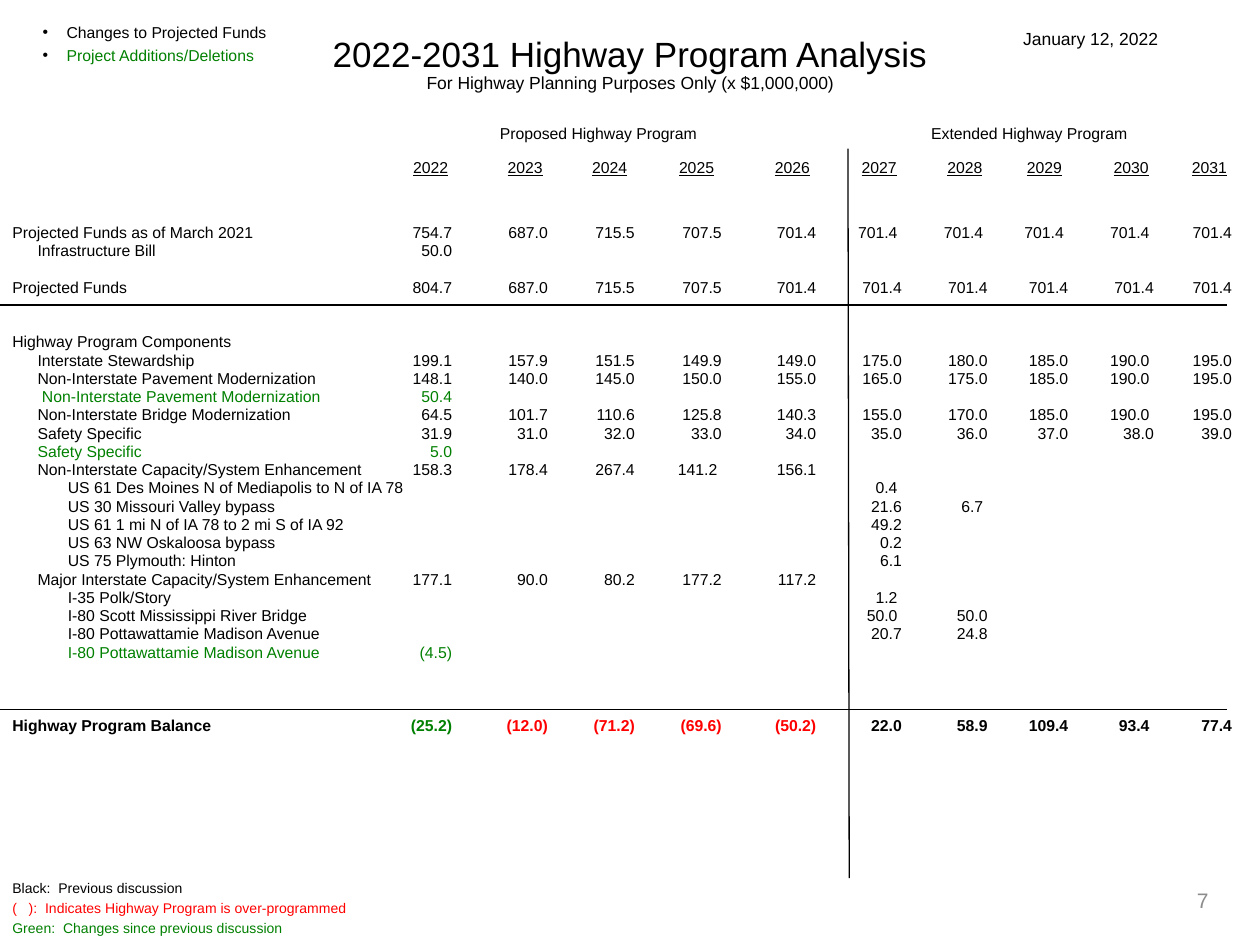
import pptx
import pptx.dml.color
import pptx.enum.shapes
import pptx.enum.text
import pptx.oxml
import pptx.oxml.ns
import pptx.util
import lxml.etree

Pt = pptx.util.Pt
qn = pptx.oxml.ns.qn
ALIGN = pptx.enum.text.PP_ALIGN
BLACK, GREEN, RED, GRAY = "000000", "008000", "FF0000", "8C8C8C"

deck = pptx.Presentation()
deck.slide_width = pptx.util.Inches(10)
deck.slide_height = pptx.util.Inches(7.5)
slide = deck.slides.add_slide(deck.slide_layouts[6])

# Grid: 100 columns by 100 rows
COL = deck.slide_width / 100
ROW = deck.slide_height / 100


def rgb(hex_string):
    return pptx.dml.color.RGBColor.from_string(hex_string)


def write(place, lines, size, top_inset=0.67, tabs=(), **frame_format):
    """Each line is (paragraph format, [(text, colour, font format), ...])."""
    left, top, width, height = place
    box = slide.shapes.add_textbox(round(left * COL), round(top * ROW),
                                   round(width * COL), round(height * ROW))
    frame = box.text_frame
    frame.word_wrap = True
    frame.margin_top = round(top_inset * ROW)
    for name, value in frame_format.items():
        setattr(frame, name, value)
    for index, (paragraph_format, runs) in enumerate(lines):
        paragraph = frame.add_paragraph() if index else frame.paragraphs[0]
        for name, value in paragraph_format.items():
            setattr(paragraph, name, value)
        if tabs:
            stops = lxml.etree.SubElement(paragraph._p.get_or_add_pPr(), qn("a:tabLst"))
            for column, kind in tabs:
                lxml.etree.SubElement(stops, qn("a:tab"), pos=str(round(column * COL)), algn=kind)
        for text, colour, font_format in runs:
            run = paragraph.add_run()
            run.text = text
            run.font.color.rgb = rgb(colour)
            for name, value in {"name": "Arial", "size": Pt(size), **font_format}.items():
                setattr(run.font, name, value)
    return frame


# Program rows: blank rows above, indent level, colour, label, values by year
LINE = 10.44
program = [
    (0, 0, BLACK, "Projected Funds as of March 2021",
     "754.7|687.0|715.5|707.5|701.4|701.4 |701.4 |701.4 |701.4 |701.4"),
    (0, 1, BLACK, "Infrastructure Bill", "50.0"),
    (1, 0, BLACK, "Projected Funds",
     "804.7|687.0|715.5|707.5|701.4|701.4|701.4|701.4|701.4|701.4"),
    (2, 0, BLACK, "Highway Program Components", ""),
    (0, 1, BLACK, "Interstate Stewardship",
     "199.1|157.9|151.5|149.9|149.0|175.0|180.0|185.0|190.0 |195.0"),
    (0, 1, BLACK, "Non-Interstate Pavement Modernization",
     "148.1|140.0|145.0|150.0|155.0|165.0|175.0|185.0|190.0 |195.0"),
    (0, 1, GREEN, " Non-Interstate Pavement Modernization", "50.4"),
    (0, 1, BLACK, "Non-Interstate Bridge Modernization",
     "64.5|101.7|110.6|125.8|140.3|155.0|170.0|185.0|190.0 |195.0"),
    (0, 1, BLACK, "Safety Specific",
     "31.9|31.0|32.0|33.0|34.0|35.0|36.0|37.0|38.0|39.0"),
    (0, 1, GREEN, "Safety Specific", "5.0"),
    (0, 1, BLACK, "Non-Interstate Capacity/System Enhancement",
     "158.3|178.4|267.4|141.2 |156.1"),
    (0, 2, BLACK, "US 61 Des Moines N of Mediapolis to N of IA 78", "|||||0.4 "),
    (0, 2, BLACK, "US 30 Missouri Valley bypass", "|||||21.6|6.7 "),
    (0, 2, BLACK, "US 61 1 mi N of IA 78 to 2 mi S of IA 92", "|||||49.2"),
    (0, 2, BLACK, "US 63 NW Oskaloosa bypass", "|||||0.2"),
    (0, 2, BLACK, "US 75 Plymouth: Hinton", "|||||6.1"),
    (0, 1, BLACK, "Major Interstate Capacity/System Enhancement",
     "177.1|90.0|80.2|177.2|117.2"),
    (0, 2, BLACK, "I-35 Polk/Story", "|||||1.2 "),
    (0, 2, BLACK, "I-80 Scott Mississippi River Bridge", "|||||50.0 |50.0"),
    (0, 2, BLACK, "I-80 Pottawattamie Madison Avenue", "|||||20.7|24.8"),
    (0, 2, GREEN, "I-80 Pottawattamie Madison Avenue", "(4.5)"),
]
program_lines = []
for gap, level, colour, label, values in program:
    cells = [label] + (values.split("|") if values else [])
    program_lines.append(({"line_spacing": Pt(LINE), "space_before": Pt(gap * LINE)},
                          [("\t" * level + "\t".join(cells), colour, {})]))

# Balance row, coloured by group
balance = [("Highway Program Balance", BLACK), ("\t(25.2)", GREEN),
           ("\t(12.0)\t(71.2)\t(69.6)\t(50.2)", RED),
           ("\t22.0\t58.9\t109.4\t93.4 \t77.4", BLACK)]
program_lines.append(({"line_spacing": Pt(LINE), "space_before": Pt(3 * LINE)},
                      [(text, colour, {"bold": True}) for text, colour in balance]))
indents = [(2, "l"), (4.4, "l")]
value_columns = [34.9, 42.5, 49.4, 56.3, 63.8, 70.6, 77.4, 83.8, 90.6, 96.8]
write((0, 20.93, 100, 64), program_lines, 9, 2.7,
      indents + [(column, "r") for column in value_columns])

# Program headings and years
write((0, 13.2, 100, 3), [({"line_spacing": Pt(LINE)},
      [("\tProposed Highway Program\tExtended Highway Program", BLACK, {})])],
      9, 0, [(46.5, "ctr"), (80.7, "ctr")])
year_runs = []
for year in range(2022, 2032):
    year_runs += [("\t", BLACK, {}), (str(year), BLACK, {"underline": True})]
year_columns = [33.2, 40.7, 47.4, 54.3, 61.9, 68.8, 75.6, 81.9, 88.8, 95]
write((0, 16.2, 100, 3.53), [({"line_spacing": Pt(LINE)}, year_runs)],
      9, 0.6, [(column, "ctr") for column in year_columns])

# Title and subtitle
write((0, 0.67, 100, 9.33), [
    ({"alignment": ALIGN.CENTER, "line_spacing": Pt(23)},
     [("2022-2031 Highway Program Analysis", BLACK, {"size": Pt(20)})]),
    ({"alignment": ALIGN.CENTER, "line_spacing": Pt(LINE)},
     [("For Highway Planning Purposes Only (x $1,000,000)", BLACK, {})]),
], 10, 3)

# Rules under the funds, above the balance, and between the two programs
for x1, y1, x2, y2 in [(0, 32.27, 97.4, 32.27), (67.4, 92.93, 67.3, 15.73),
                       (0, 75.07, 97.4, 75.07)]:
    rule = slide.shapes.add_connector(
        pptx.enum.shapes.MSO_CONNECTOR.STRAIGHT,
        round(x1 * COL), round(y1 * ROW), round(x2 * COL), round(y2 * ROW))
    rule.line.color.rgb = rgb(BLACK)
    rule.line.width = Pt(0.75)
    lxml.etree.SubElement(rule._element.spPr, qn("a:effectLst"))

# Page number, colour legend and date
write((73.6, 92.53, 23.3, 5.33), [({"alignment": ALIGN.RIGHT}, [("7", GRAY, {})])], 12,
      vertical_anchor=pptx.enum.text.MSO_ANCHOR.MIDDLE)
legend = [("Black:  Previous discussion", BLACK),
          ("(   ):  Indicates Highway Program is over-programmed", RED),
          ("Green:  Changes since previous discussion", GREEN)]
write((0, 92.4, 38.3, 7.47),
      [({"space_before": Pt(1.9 if index else 0)}, [(text, colour, {})])
       for index, (text, colour) in enumerate(legend)], 8)
write((75.4, 2.27, 22.3, 3.6),
      [({"alignment": ALIGN.CENTER}, [("January 12, 2022", BLACK, {})])], 10)

# Bulleted key
key = write((2.4, 1.6, 24.7, 10.67), [
    ({}, [("Changes to Projected Funds", BLACK, {})]),
    ({"space_before": Pt(2.3)}, [("Project Additions/Deletions", GREEN, {})]),
], 9, 0.8)
for paragraph in key.paragraphs:
    properties = paragraph._p.get_or_add_pPr()
    properties.set("marL", str(round(1.9 * COL)))
    properties.set("indent", str(round(-1.9 * COL)))
    bullet_colour = lxml.etree.SubElement(properties, qn("a:buClr"))
    lxml.etree.SubElement(bullet_colour, qn("a:srgbClr"), val=BLACK)
    lxml.etree.SubElement(properties, qn("a:buFont"), typeface="Arial")
    lxml.etree.SubElement(properties, qn("a:buChar"), char="•")

deck.save("out.pptx")
